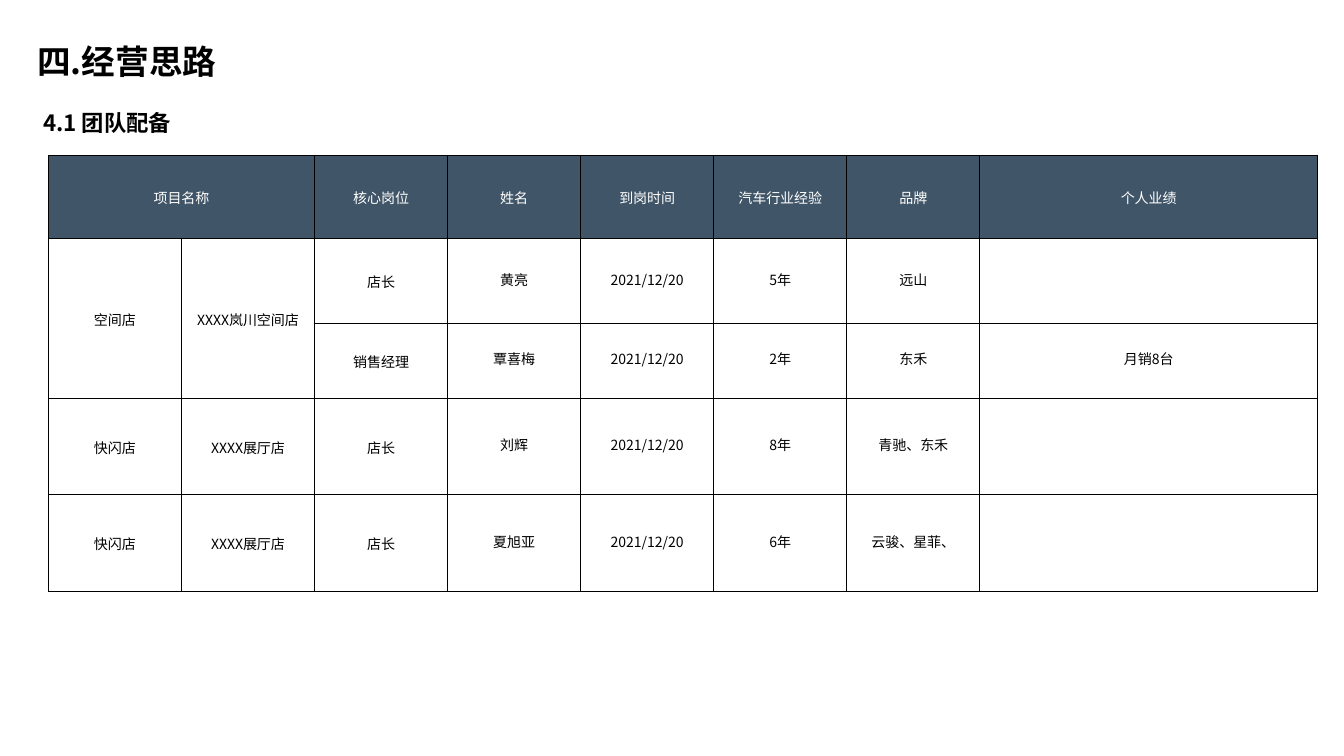
from dataclasses import dataclass

from lxml import etree
from pptx import Presentation
from pptx.dml.color import RGBColor
from pptx.enum.text import MSO_ANCHOR, PP_ALIGN
from pptx.oxml.ns import qn
from pptx.slide import Slide
from pptx.table import _Cell
from pptx.text.text import _Paragraph
from pptx.util import Emu, Pt

MIDDLE = MSO_ANCHOR.MIDDLE
LEFT = PP_ALIGN.LEFT
CENTER = PP_ALIGN.CENTER
EMU_PER_PX = 9144


@dataclass(frozen=True)
class Theme:
    font: str = "Noto Sans CJK SC"
    ink: str = "000000"
    paper: str = "FFFFFF"
    header: str = "405567"
    title_size: int = 24
    subtitle_size: int = 16
    cell_size: int = 10
    border_width: int = 1


@dataclass(frozen=True)
class Heading:
    text: str
    left: int
    top: int
    width: int
    height: int
    size: int
    inset: int


@dataclass(frozen=True)
class Merge:
    first_row: int
    first_column: int
    last_row: int
    last_column: int


THEME = Theme()
HEADINGS = [
    Heading("四.经营思路", 37, 36, 732, 55, THEME.title_size, 0),
    Heading("4.1 团队配备", 33, 106, 1045, 34, THEME.subtitle_size, 10),
]
TABLE_LEFT, TABLE_TOP = 48, 154
COLUMN_WIDTHS = [132] * 7 + [335]
ROW_HEIGHTS = [83, 84, 74, 96, 96]
FIRST_PERSON_COLUMN = 3
START_DATE = "2021/12/20"
TEAM_ROWS = [
    ["项目名称", "", "核心岗位", "姓名", "到岗时间", "汽车行业经验", "品牌", "个人业绩"],
    ["空间店", "XXXX岚川空间店", "店长", "黄亮", START_DATE, "5年", "远山", ""],
    ["", "", "销售经理", "覃喜梅", START_DATE, "2年", "东禾", "月销8台"],
    ["快闪店", "XXXX展厅店", "店长", "刘辉", START_DATE, "8年", "青驰、东禾", ""],
    ["快闪店", "XXXX展厅店", "店长", "夏旭亚", START_DATE, "6年", "云骏、星菲、", ""],
]
MERGES = [Merge(0, 0, 0, 1), Merge(1, 0, 2, 0), Merge(1, 1, 2, 1)]


def px(length: int) -> Emu:
    return Emu(length * EMU_PER_PX)


def add_span(para: _Paragraph, text: str, size: int, color: str, bold: bool = False) -> None:
    span = para.add_run()
    span.text = text
    span.font.name = THEME.font
    span.font.size = Pt(size)
    span.font.bold = bold
    span.font.color.rgb = RGBColor.from_string(color)
    east_asian = etree.SubElement(span.font._element, qn("a:ea"))
    east_asian.set("typeface", THEME.font)


def add_heading(page: Slide, heading: Heading) -> None:
    box = page.shapes.add_textbox(
        px(heading.left), px(heading.top), px(heading.width), px(heading.height)
    )
    frame = box.text_frame
    frame.word_wrap = True
    frame.vertical_anchor = MIDDLE
    frame.margin_left = frame.margin_right = px(heading.inset)
    frame.margin_top = frame.margin_bottom = 0
    para = frame.paragraphs[0]
    para.alignment = LEFT
    para.line_spacing = 0.9
    add_span(para, heading.text, heading.size, THEME.ink, bold=True)


def add_borders(cell: _Cell) -> None:
    properties = cell._tc.get_or_add_tcPr()
    for side in ("a:lnL", "a:lnR", "a:lnT", "a:lnB"):
        line = etree.SubElement(properties, qn(side), w=str(Pt(THEME.border_width)))
        fill = etree.SubElement(line, qn("a:solidFill"))
        etree.SubElement(fill, qn("a:srgbClr"), val=THEME.ink)


def style_cell(cell: _Cell, text: str, is_header: bool, bottom_inset: int) -> None:
    add_borders(cell)
    if is_header:
        cell.fill.solid()
        cell.fill.fore_color.rgb = RGBColor.from_string(THEME.header)
    else:
        cell.fill.background()
    cell.vertical_anchor = MIDDLE
    cell.margin_left = cell.margin_top = cell.margin_right = px(1)
    cell.margin_bottom = px(bottom_inset)
    para = cell.text_frame.paragraphs[0]
    para.alignment = CENTER
    if text:
        add_span(para, text, THEME.cell_size, THEME.paper if is_header else THEME.ink)


def add_team_table(page: Slide) -> None:
    table = page.shapes.add_table(
        len(ROW_HEIGHTS),
        len(COLUMN_WIDTHS),
        px(TABLE_LEFT),
        px(TABLE_TOP),
        px(sum(COLUMN_WIDTHS)),
        px(sum(ROW_HEIGHTS)),
    ).table
    table.first_row = False
    table.horz_banding = False
    for column, width in zip(table.columns, COLUMN_WIDTHS):
        column.width = px(width)
    for row, height in zip(table.rows, ROW_HEIGHTS):
        row.height = px(height)
    for row_index, texts in enumerate(TEAM_ROWS):
        is_header = row_index == 0
        for column_index, text in enumerate(texts):
            is_person = not is_header and column_index >= FIRST_PERSON_COLUMN
            cell = table.cell(row_index, column_index)
            style_cell(cell, text, is_header, 5 if is_person else 0)
    for merge in MERGES:
        first = table.cell(merge.first_row, merge.first_column)
        first.merge(table.cell(merge.last_row, merge.last_column))


def main() -> None:
    deck = Presentation()
    deck.slide_width = px(1333)
    deck.slide_height = px(750)
    page = deck.slides.add_slide(deck.slide_layouts[6])
    for heading in HEADINGS:
        add_heading(page, heading)
    add_team_table(page)
    deck.save("out.pptx")


if __name__ == "__main__":
    main()
